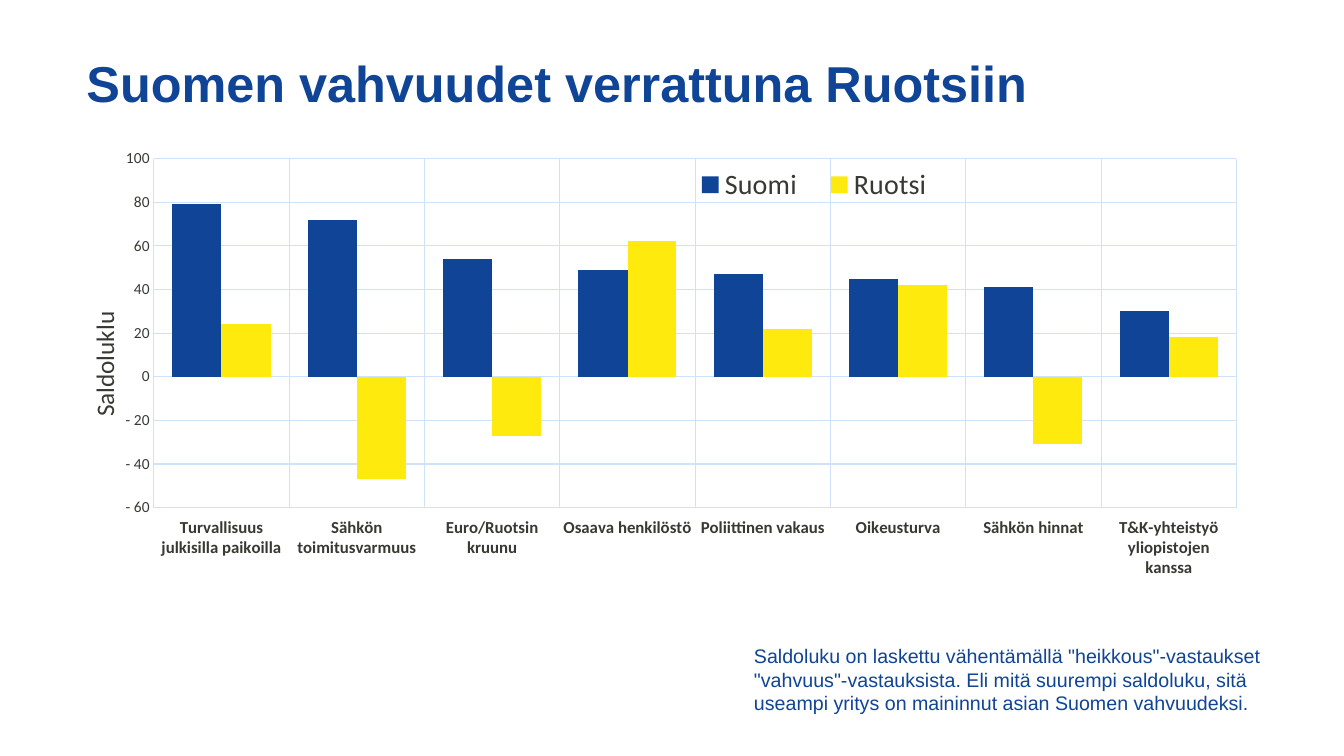
from lxml import etree
from pptx import Presentation
from pptx.chart.data import CategoryChartData
from pptx.dml.color import RGBColor
from pptx.enum.chart import XL_CHART_TYPE, XL_LEGEND_POSITION, XL_TICK_LABEL_POSITION, XL_TICK_MARK
from pptx.enum.text import MSO_ANCHOR
from pptx.oxml.ns import qn
from pptx.util import Inches, Pt

COLUMNS = XL_CHART_TYPE.COLUMN_CLUSTERED
LEGEND_BOTTOM = XL_LEGEND_POSITION.BOTTOM
LABELS_LOW = XL_TICK_LABEL_POSITION.LOW
NO_TICK = XL_TICK_MARK.NONE
MIDDLE = MSO_ANCHOR.MIDDLE

COLORS = {"blue": "0F4496", "yellow": "FEEB0D", "dark": "373A32", "grid": "D0E1FA"}

TITLE_BOX = (0.76, 0.13, 12.57, 1.45)
CHART_BOX = (0.7, 1.4, 11.8, 4.33)
NOTE_BOX = (7.38, 6.54, 5.37, 0.4)

TITLE = "Suomen vahvuudet verrattuna Ruotsiin"
NOTE = (
    'Saldoluku on laskettu vähentämällä "heikkous"-vastaukset '
    '"vahvuus"-vastauksista. Eli mitä suurempi saldoluku, sitä '
    "useampi yritys on maininnut asian Suomen vahvuudeksi."
)
CATEGORIES = (
    "Turvallisuus julkisilla paikoilla",
    "Sähkön toimitusvarmuus",
    "Euro/Ruotsin kruunu",
    "Osaava henkilöstö",
    "Poliittinen vakaus",
    "Oikeusturva",
    "Sähkön hinnat",
    "T&K-yhteistyö yliopistojen kanssa",
)
SERIES = (
    ("Suomi", "blue", (79, 72, 54, 49, 47, 45, 41, 30)),
    ("Ruotsi", "yellow", (24, -47, -27, 62, 22, 42, -31, 18)),
)


def rgb(color):
    """Return the named colour."""
    return RGBColor.from_string(COLORS[color])


def set_values(target, values):
    """Set each attribute of the target from a dict."""
    for name, value in values.items():
        setattr(target, name, value)


def style_font(font, color, name, size, bold=False):
    """Give a font its face, size, weight and colour."""
    set_values(font, {"name": name, "size": Pt(size), "bold": bold})
    font.color.rgb = rgb(color)


def style_line(line):
    """Make a line thin and pale."""
    line.width = Pt(0.75)
    line.color.rgb = rgb("grid")


def add_text(page, box, text, size, bold=False, spacing=1.0):
    """Place one blue, vertically centred paragraph in the box."""
    frame = page.shapes.add_textbox(*map(Inches, box)).text_frame
    set_values(frame, {"word_wrap": True, "vertical_anchor": MIDDLE})
    para = frame.paragraphs[0]
    para.line_spacing = spacing
    span = para.add_run()
    span.text = text
    style_font(span.font, "blue", "Arial", size, bold)


def set_layout(element, index, inner=False, **fractions):
    """Fix the place of a chart part as fractions of the chart."""
    for old in element.findall(qn("c:layout")):
        element.remove(old)
    layout = etree.Element(qn("c:layout"))
    manual = etree.SubElement(layout, qn("c:manualLayout"))
    settings = {"layoutTarget": "inner"} if inner else {}
    settings.update({"xMode": "edge", "yMode": "edge"})
    settings.update(fractions)
    for name, value in settings.items():
        etree.SubElement(manual, qn(f"c:{name}")).set("val", str(value))
    element.insert(index, layout)


def style_axes(chart):
    """Format both axes, their gridlines and the value axis title."""
    category, value = chart.category_axis, chart.value_axis
    for axis, size, bold in ((category, 12, True), (value, 11, False)):
        set_values(axis, {
            "major_tick_mark": NO_TICK,
            "minor_tick_mark": NO_TICK,
            "has_major_gridlines": True,
        })
        style_line(axis.major_gridlines.format.line)
        style_font(axis.tick_labels.font, "dark", "Calibri", size, bold)
    category.tick_label_position = LABELS_LOW
    style_line(category.format.line)
    value.format.line.fill.background()
    set_values(value, {"minimum_scale": -60, "maximum_scale": 100, "major_unit": 20})
    set_values(value.tick_labels, {
        "number_format": '0;"- "0;0',
        "number_format_is_linked": False,
    })
    title = value.axis_title
    span = title.text_frame.paragraphs[0].add_run()
    span.text = "Saldoluklu"
    style_font(span.font, "dark", "Calibri", 18)
    body = title._element.find(".//" + qn("a:bodyPr"))
    body.set("rot", "-5400000")
    body.set("vert", "horz")
    set_layout(title._element, 1, x=0.01, y=0.38)


def add_balance_chart(page, box):
    """Place the clustered columns of both countries in the box."""
    data = CategoryChartData()
    data.categories = CATEGORIES
    for name, _, values in SERIES:
        data.add_series(name, values)
    chart = page.shapes.add_chart(COLUMNS, *map(Inches, box), data).chart
    style_font(chart.font, "dark", "Calibri", 10)
    set_values(chart, {"has_title": False, "has_legend": True})
    plot = chart.plots[0]
    set_values(plot, {"gap_width": 76, "overlap": 0, "vary_by_categories": False})
    for series, (_, color, _) in zip(plot.series, SERIES):
        series.invert_if_negative = False
        series.format.fill.solid()
        series.format.fill.fore_color.rgb = rgb(color)
    style_axes(chart)
    legend = chart.legend
    set_values(legend, {"position": LEGEND_BOTTOM, "include_in_layout": False})
    style_font(legend.font, "dark", "Calibri", 20)
    set_layout(legend._element, 1, x=0.51, y=0.05, w=0.23, h=0.1)
    area = chart._chartSpace.find(".//" + qn("c:plotArea"))
    set_layout(area, 0, inner=True, x=0.07, y=0.04, w=0.91, h=0.8)


def main():
    """Build the slide and save the deck."""
    deck = Presentation()
    set_values(deck, {"slide_width": Inches(13.33), "slide_height": Inches(7.5)})
    page = deck.slides.add_slide(deck.slide_layouts[6])
    add_text(page, TITLE_BOX, TITLE, 36, bold=True, spacing=0.9)
    add_balance_chart(page, CHART_BOX)
    add_text(page, NOTE_BOX, NOTE, 14)
    deck.save("out.pptx")


if __name__ == "__main__":
    main()
